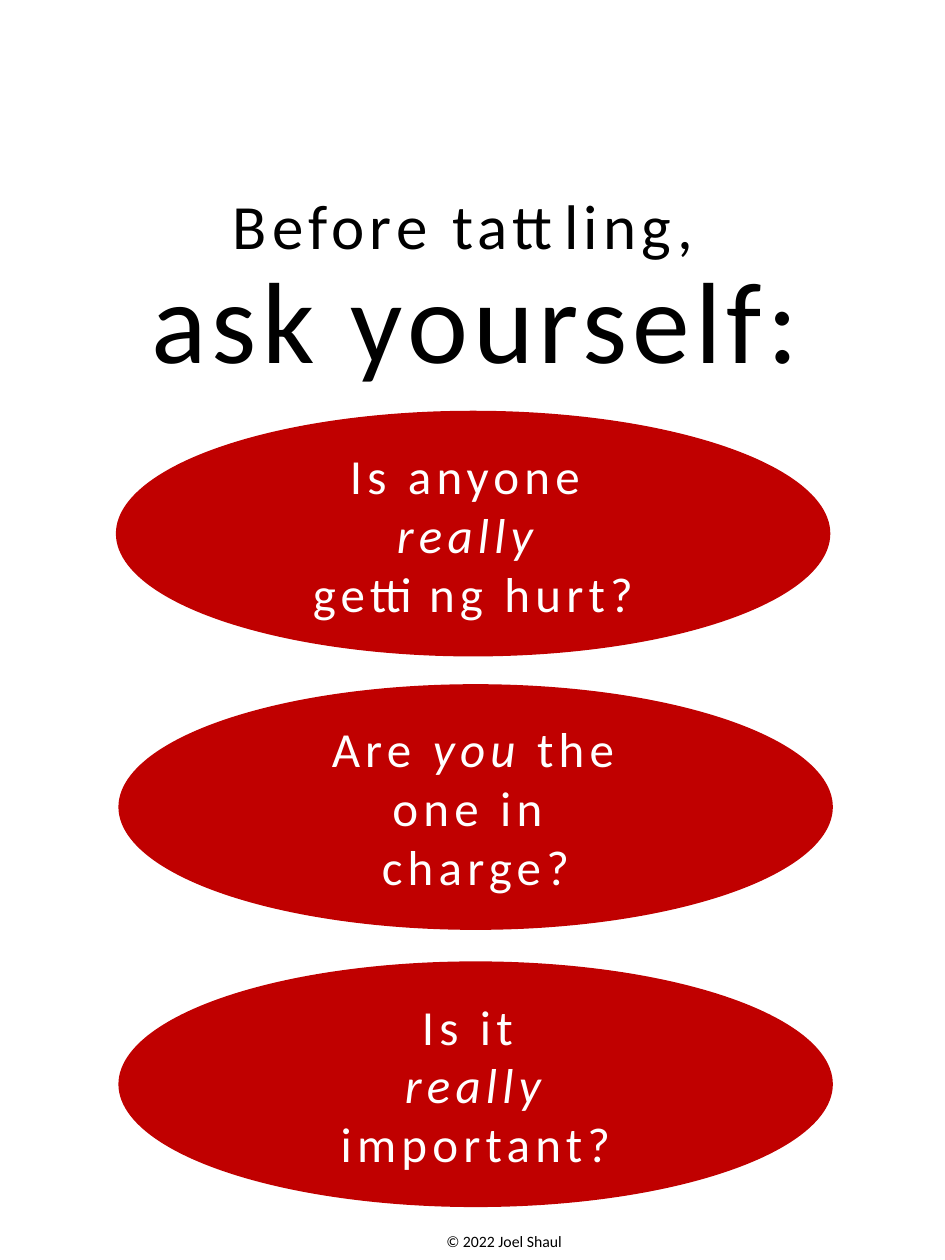
from pptx import Presentation
from pptx.dml.color import RGBColor
from pptx.enum.shapes import MSO_SHAPE
from pptx.enum.text import MSO_AUTO_SIZE, PP_ALIGN
from pptx.util import Pt

OVAL = MSO_SHAPE.OVAL
RECTANGLE = MSO_SHAPE.RECTANGLE
CENTER = PP_ALIGN.CENTER
GROW = MSO_AUTO_SIZE.SHAPE_TO_FIT_TEXT
RED, BLACK, WHITE = "C00000", "000000", "FFFFFF"
OVAL_SIZE = (408.24, 140.4)
QUESTIONS = [
    (66.24, 234.72, [[("Is anyone ", False)], [("really ", True)], [("getting hurt?", False)]]),
    (67.68, 390.96, [[("Are ", False), ("you", True), (" the one in ", False)], [("charge?", False)]]),
    (67.68, 549.36, [[("Is it ", False)], [("really", True), (" important?", False)]]),
]


def color(value):
    """Turn a hex string into a colour."""
    return RGBColor.from_string(value)


def write(para, text, size, ink=BLACK, italic=False, spacing=0):
    """Add one formatted span, with letter spacing in points."""
    span = para.add_run()
    span.text = text
    font = span.font
    font.name, font.size, font.italic = "Calibri", Pt(size), italic
    font.color.rgb = color(ink)
    if spacing:
        span._r.get_or_add_rPr().set("spc", str(spacing * 100))


def add_line(page, box, text, size, wrap=True, spacing=0):
    """Place one centred line of black text in the box."""
    frame = page.shapes.add_textbox(*map(Pt, box)).text_frame
    frame.word_wrap = wrap
    frame.auto_size = GROW
    para = frame.paragraphs[0]
    para.alignment = CENTER
    write(para, text, size, spacing=spacing)


def add_red_shape(group, kind, box):
    """Add a plain red shape to the group."""
    shape = group.shapes.add_shape(kind, *map(Pt, box))
    shape.shadow.inherit = False
    shape.fill.solid()
    shape.fill.fore_color.rgb = color(RED)
    shape.line.fill.background()
    return shape


def add_question(page, box, lines):
    """Draw a red oval filling the box, with the question centred in it."""
    left, top, width, height = box
    label_width, label_height = 239.76, 108.72
    group = page.shapes.add_group_shape()
    add_red_shape(group, OVAL, box)
    label = add_red_shape(group, RECTANGLE, (
        left + (width - label_width) / 2, top + (height - label_height) / 2,
        label_width, label_height))
    frame = label.text_frame
    frame.word_wrap = True
    frame.auto_size = GROW
    for index, line in enumerate(lines):
        para = frame.add_paragraph() if index else frame.paragraphs[0]
        para.alignment = CENTER
        for text, italic in line:
            write(para, text, 28, ink=WHITE, italic=italic, spacing=3)


def main():
    """Build the poster and save it."""
    deck = Presentation()
    deck.slide_width, deck.slide_height = Pt(540), Pt(720)
    page = deck.slides.add_slide(deck.slide_layouts[6])
    add_line(page, (12.24, 102.96, 516.24, 51.12), "Before tattling, ", 36, spacing=3)
    for left, top, lines in QUESTIONS:
        add_question(page, (left, top, *OVAL_SIZE), lines)
    add_line(page, (13.68, 138.24, 516.24, 87.12), "ask yourself:", 66, spacing=3)
    add_line(page, (247.68, 700.56, 80.64, 18), "© 2022 Joel Shaul", 9, wrap=False)
    deck.save("out.pptx")


if __name__ == "__main__":
    main()
